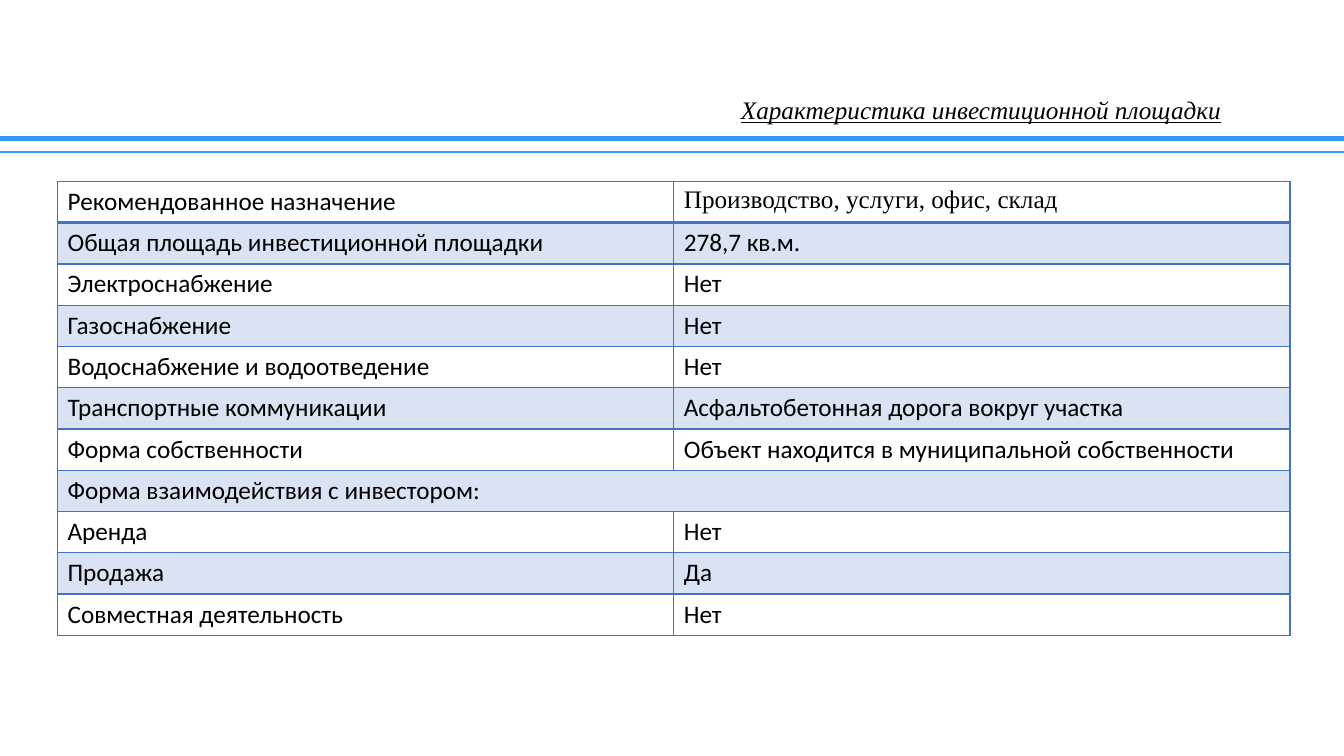
from lxml.etree import SubElement as Sub
from pptx import Presentation
from pptx.dml.color import RGBColor
from pptx.enum.shapes import MSO_CONNECTOR as Conn
from pptx.enum.text import MSO_ANCHOR as Anchor, PP_ALIGN as Align
from pptx.oxml import parse_xml
from pptx.oxml.ns import nsdecls, qn
from pptx.util import Cm, Pt

BLACK = RGBColor(0x00, 0x00, 0x00)
SKY = RGBColor(0x33, 0x99, 0xFF)
BLUE = RGBColor(0x44, 0x72, 0xC4)
PALE = RGBColor(0xDA, 0xE3, 0xF3)
SERIF = "Times New Roman"
SANS = "Calibri"


def write(para, text, **look):
    run = para.add_run()
    run.text = text
    run.font.color.rgb = BLACK
    for key, value in {"size": Pt(18), "bold": False, **look}.items():
        setattr(run.font, key, value)


def edge(cell, side, width):
    cell._tc.get_or_add_tcPr().append(parse_xml(
        f'<a:ln{side} {nsdecls("a")} w="{Pt(width)}"><a:solidFill>'
        f'<a:srgbClr val="{BLUE}"/></a:solidFill></a:ln{side}>'))


deck = Presentation()
deck.slide_width = Cm(33.87)
deck.slide_height = Cm(19.05)
slide = deck.slides.add_slide(deck.slide_layouts[6])
shapes = slide.shapes

for y, width in ((3.5, 3.5), (3.82, 1.5)):
    rule = shapes.add_connector(Conn.STRAIGHT, 0, Cm(y), deck.slide_width, Cm(y))
    rule.line.color.rgb = SKY
    rule.line.width = Pt(width)
    Sub(rule._element.spPr, qn("a:effectLst"))

title = shapes.add_textbox(Cm(16.94), Cm(2.46), Cm(15.57), Cm(0.69))
frame = title.text_frame
frame.word_wrap = True
frame.vertical_anchor = Anchor.MIDDLE
head = frame.paragraphs[0]
head.alignment = Align.CENTER
head.line_spacing = 0.9
write(head, "Характеристика инвестиционной площадки",
      name=SERIF, italic=True, underline=True)

rows = [
    ("Рекомендованное назначение", "Производство, услуги, офис, склад"),
    ("Общая площадь инвестиционной площадки", "278,7 кв.м."),
    ("Электроснабжение", "Нет"),
    ("Газоснабжение", "Нет"),
    ("Водоснабжение и водоотведение", "Нет"),
    ("Транспортные коммуникации", "Асфальтобетонная дорога вокруг участка"),
    ("Форма собственности", "Объект находится в муниципальной собственности"),
    ("Форма взаимодействия с инвестором:", ""),
    ("Аренда", "Нет"),
    ("Продажа", "Да"),
    ("Совместная деятельность", "Нет"),
]
high = Cm(1.04)
grid = shapes.add_table(len(rows), 2, Cm(1.45), Cm(4.57),
                        Cm(31.06), high * len(rows)).table
grid.first_row = False
grid.horz_banding = False
for col in grid.columns:
    col.width = Cm(15.53)

for r, texts in enumerate(rows):
    grid.rows[r].height = high
    for c, text in enumerate(texts):
        cell = grid.cell(r, c)
        for side in "LRTB":
            thick = (r, side) in ((0, "B"), (1, "T"))
            edge(cell, side, 2 if thick else 1)
        if r % 2:
            cell.fill.solid()
            cell.fill.fore_color.rgb = PALE
        else:
            cell.fill.background()
        if text:
            write(cell.text_frame.paragraphs[0], text,
                  name=SERIF if (r, c) == (0, 1) else SANS)
    if not texts[1]:
        grid.cell(r, 0).merge(grid.cell(r, 1))

deck.save("out.pptx")
